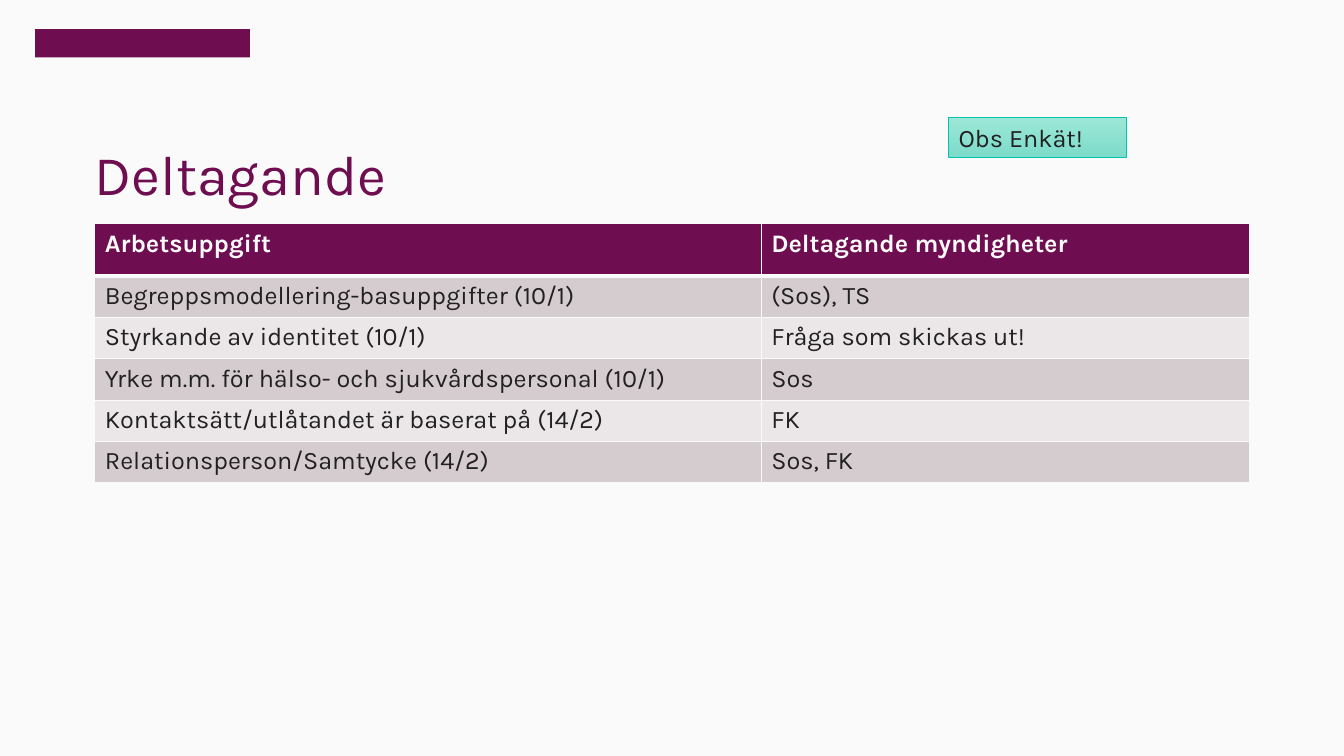
from lxml import etree
from pptx import Presentation
from pptx.dml.color import RGBColor
from pptx.enum.shapes import MSO_SHAPE
from pptx.enum.text import MSO_ANCHOR, MSO_AUTO_SIZE, PP_ALIGN
from pptx.oxml.ns import qn
from pptx.util import Inches, Pt

RECTANGLE = MSO_SHAPE.RECTANGLE
LEFT = PP_ALIGN.LEFT
TOP, MIDDLE, BOTTOM = MSO_ANCHOR.TOP, MSO_ANCHOR.MIDDLE, MSO_ANCHOR.BOTTOM
NO_AUTOFIT = MSO_AUTO_SIZE.NONE

FONT = "Karla"
COLORS = {
    "plum": "6E0E50",
    "paper": "FAFAFA",
    "ink": "212121",
    "band_dark": "D5CCD0",
    "band_light": "EBE7E9",
    "note_top": "9DE8D8",
    "note_bottom": "7CDBC9",
    "note_line": "04C3AD",
}


def color(name):
    return RGBColor.from_string(COLORS[name])


def write_text(text_frame, text, size=18, color_name="ink", bold=False,
               anchor=TOP, line_spacing=1.0):
    text_frame.word_wrap = True
    text_frame.vertical_anchor = anchor
    paragraph = text_frame.paragraphs[0]
    paragraph.alignment = LEFT
    paragraph.line_spacing = line_spacing
    run = paragraph.add_run()
    run.text = text
    run.font.name = FONT
    run.font.size = Pt(size)
    run.font.bold = bold
    run.font.color.rgb = color(color_name)


presentation = Presentation()
presentation.slide_width = Inches(13.33)
presentation.slide_height = Inches(7.5)
slide = presentation.slides.add_slide(presentation.slide_layouts[5])
slide.background.fill.solid()
slide.background.fill.fore_color.rgb = color("paper")

# Plain block in the logo position
logo_block = slide.shapes.add_shape(
    RECTANGLE, Inches(0.35), Inches(0.29), Inches(2.13), Inches(0.28))
logo_block.shadow.inherit = False
logo_block.fill.solid()
logo_block.fill.fore_color.rgb = color("plum")
logo_block.line.fill.background()

# Title
title = slide.shapes.title
title.left, title.top = Inches(0.94), Inches(1.45)
title.width, title.height = Inches(11.46), Inches(0.61)
title_frame = title.text_frame
title_frame.auto_size = NO_AUTOFIT
title_frame.margin_left = title_frame.margin_right = 0
title_frame.margin_top = title_frame.margin_bottom = 0
write_text(title_frame, "Deltagande", size=40, color_name="plum",
           anchor=BOTTOM, line_spacing=0.9)

# Table of tasks and participating authorities
task_rows = [
    ("Arbetsuppgift", "Deltagande myndigheter"),
    ("Begreppsmodellering-basuppgifter (10/1)", "(Sos), TS"),
    ("Styrkande av identitet (10/1)", "Fråga som skickas ut!"),
    ("Yrke m.m. för hälso- och sjukvårdspersonal (10/1)", "Sos"),
    ("Kontaktsätt/utlåtandet är baserat på (14/2)", "FK"),
    ("Relationsperson/Samtycke (14/2)", "Sos, FK"),
]
table = slide.shapes.add_table(
    len(task_rows), 2, Inches(0.94), Inches(2.22), Inches(11.45), Inches(2.57)).table
for column, width in zip(table.columns, (6.61, 4.84)):
    column.width = Inches(width)

for row_index, texts in enumerate(task_rows):
    is_header = row_index == 0
    table.rows[row_index].height = Inches(0.52 if is_header else 0.41)
    if is_header:
        fill_name = "plum"
    else:
        fill_name = "band_dark" if row_index % 2 else "band_light"
    border_widths = {
        "a:lnL": 1,
        "a:lnR": 1,
        "a:lnT": 3 if row_index == 1 else 1,
        "a:lnB": 3 if is_header else 1,
    }
    for column_index, text in enumerate(texts):
        cell = table.cell(row_index, column_index)
        cell.fill.solid()
        cell.fill.fore_color.rgb = color(fill_name)
        write_text(cell.text_frame, text, bold=is_header,
                   color_name="paper" if is_header else "ink")
        # Cell borders come before the fill
        properties = cell._tc.get_or_add_tcPr()
        for position, (tag, width) in enumerate(border_widths.items()):
            border = etree.Element(qn(tag), w=str(Pt(width)))
            border_fill = etree.SubElement(border, qn("a:solidFill"))
            etree.SubElement(border_fill, qn("a:srgbClr"), val=COLORS["paper"])
            properties.insert(position, border)

# Reminder note
note = slide.shapes.add_shape(
    RECTANGLE, Inches(9.41), Inches(1.16), Inches(1.76), Inches(0.4))
note.shadow.inherit = False
note.fill.gradient()
note.fill.gradient_angle = 270
for stop, name in zip(note.fill.gradient_stops, ("note_top", "note_bottom")):
    stop.color.rgb = color(name)
note.line.color.rgb = color("note_line")
note.line.width = Pt(0.5)
write_text(note.text_frame, "Obs Enkät!", anchor=MIDDLE)

presentation.save("out.pptx")
